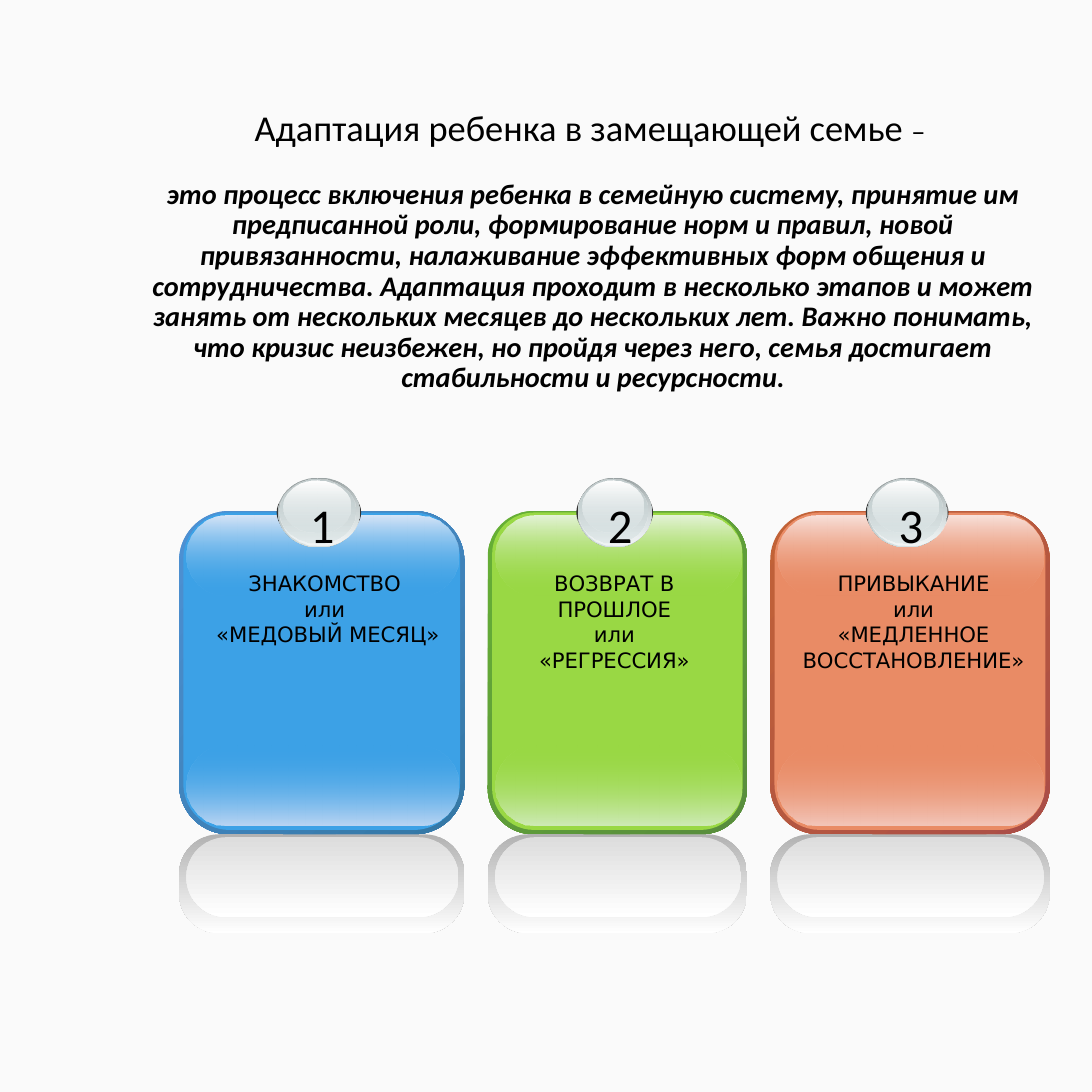
from pptx import Presentation
from pptx.dml.color import RGBColor
from pptx.enum.shapes import MSO_SHAPE as Shape
from pptx.enum.text import MSO_ANCHOR as Anchor, MSO_AUTO_SIZE as AutoSize, PP_ALIGN as Align
from pptx.oxml.ns import qn
from pptx.util import Inches, Pt
from lxml.etree import SubElement

SIDE = 7.5
CARD_TOP, CARD_HEIGHT = 3.51, 2.22
REFLECTION_TOP = CARD_TOP + CARD_HEIGHT
BADGE_TOP = 3.28
TEXT_FONT, LABEL_FONT = "Calibri", "DejaVu Sans"

HEADING = "Адаптация ребенка в замещающей семье "
DEFINITION = (
    "это процесс включения ребенка в семейную систему, принятие им предписанной роли, "
    "формирование норм и правил, новой привязанности, налаживание эффективных форм общения "
    "и сотрудничества. Адаптация проходит в несколько этапов и может занять от нескольких "
    "месяцев до нескольких лет. Важно понимать, что кризис неизбежен, но пройдя через него, "
    "семья достигает стабильности и ресурсности."
)

# Card left and width, label left and width, colours (edge start, edge end, face, top, bottom), lines
STAGES = [
    ((1.23, 1.96), (1.30, 1.86), ("4E91D4", "3477A4", "3CA1E6", "D7E5F7", "BDD6F3"),
     ["ЗНАКОМСТВО", "или", " «МЕДОВЫЙ МЕСЯЦ»"]),
    ((3.35, 1.78), (3.34, 1.76), ("66AF35", "588D3D", "99D844", "E4F3D8", "D0EBB9"),
     ["ВОЗВРАТ В ПРОШЛОЕ", "или", "«РЕГРЕССИЯ»"]),
    ((5.29, 1.92), (5.36, 1.83), ("C16237", "AB4E47", "E98B65", "F8E1DB", "F3C7BB"),
     ["ПРИВЫКАНИЕ", "или", "«МЕДЛЕННОЕ ВОССТАНОВЛЕНИЕ»"]),
]

# Badge ellipses: left and width as shares of the card, top offset, height, colour stops
BADGE_LAYERS = [
    (0.342, 0.296, 0.04, 0.40, [("333333", 100)]),
    (0.347, 0.286, 0.00, 0.48, [("99A1A2", 100), ("D6E1E2", 100)]),
    (0.352, 0.281, 0.00, 0.47, [("D6E1E2", 0), ("F2F5F5", 100)]),
    (0.352, 0.265, 0.01, 0.44, [("C1CBCC", 100), ("D6E1E2", 48)]),
    (0.367, 0.235, 0.02, 0.36, [("FFFFFF", 100), ("D6E1E2", 38)]),
]


def color(value):
    return RGBColor.from_string(value)


def paint(fill, stops, angle):
    """Fill with one colour or with a two-colour gradient of (colour, opacity) stops."""
    if len(stops) == 1:
        fill.solid()
        fill.fore_color.rgb = color(stops[0][0])
        return
    fill.gradient()
    fill.gradient_angle = 360 - angle
    for stop, (value, _) in zip(fill.gradient_stops, stops):
        stop.color.rgb = color(value)


def add_layer(group, kind, left, top, width, height, stops, angle=90, rounding=None):
    layer = group.shapes.add_shape(kind, *map(Inches, (left, top, width, height)))
    if rounding is not None:
        layer.adjustments[0] = rounding
    layer.shadow.inherit = False
    layer.line.fill.background()
    paint(layer.fill, stops, angle)
    for (_, opacity), element in zip(stops, layer.element.spPr.iter(qn("a:srgbClr"))):
        if opacity < 100:
            SubElement(element, qn("a:alpha"), val=str(opacity * 1000))


def add_text(group, left, top, width, height, lines, font, size, align, wrap):
    box = group.shapes.add_textbox(*map(Inches, (left, top, width, height)))
    frame = box.text_frame
    frame.word_wrap = wrap
    frame.auto_size = AutoSize.SHAPE_TO_FIT_TEXT
    frame.text = "\n".join(lines)
    for para in frame.paragraphs:
        para.alignment = align
        para.font.name, para.font.size = font, Pt(size)
        para.font.color.rgb = color("000000")


def add_title(page):
    title = page.shapes.title
    title.left, title.top = Inches(0.84), Inches(1.24)
    title.width, title.height = Inches(6.47), Inches(0.98)
    frame = title.text_frame
    frame.word_wrap = True
    frame.auto_size = AutoSize.NONE
    frame.vertical_anchor = Anchor.MIDDLE
    para = frame.paragraphs[0]
    para.alignment, para.line_spacing = Align.CENTER, 0.9
    para.font.name = TEXT_FONT
    para.font.color.rgb = color("000000")
    for text, size, strong in [(HEADING, 18, False), ("– ", 14, False), (DEFINITION, 14, True)]:
        if strong:
            para.add_line_break()
            para.add_line_break()
        span = para.add_run()
        span.text = text
        span.font.size = Pt(size)
        span.font.bold = span.font.italic = strong
    # Line breaks take the size of the definition
    for line_break in title.element.iter(qn("a:br")):
        SubElement(line_break, qn("a:rPr"), sz="1400")


def add_card(group, left, width, colors):
    edge_start, edge_end, face, top_light, bottom_light = colors
    gloss_left, gloss_width, gloss_height = left + 0.05, width - 0.09, 0.55

    def add_plate(*args, **options):
        add_layer(group, Shape.ROUNDED_RECTANGLE, *args, **options)

    # Body with its face
    add_plate(left, CARD_TOP, width, CARD_HEIGHT, [(edge_start, 100), (edge_end, 100)],
              angle=45, rounding=0.175)
    add_plate(left + 0.03, CARD_TOP + 0.01, width - 0.06, 2.18, [(face, 100)], rounding=0.167)
    # Reflection below the card
    add_plate(left, REFLECTION_TOP, width, 0.68, [("B2B2B2", 100), ("FFFFFF", 100)],
              rounding=0.404)
    # Glossy bands
    bands = [
        (5.12, [(face, 0), (bottom_light, 100)]),
        (3.54, [(top_light, 100), (face, 0)]),
        (REFLECTION_TOP + 0.02, [("DDDDDD", 100), ("FFFFFF", 100)]),
    ]
    for top, stops in bands:
        add_plate(gloss_left, top, gloss_width, gloss_height, stops, rounding=0.5)


def add_badge(group, left, width, number):
    for start, share, offset, height, stops in BADGE_LAYERS:
        add_layer(group, Shape.OVAL, left + start * width, BADGE_TOP + offset,
                  share * width, height, stops)
    add_text(group, left + 0.408 * width, 3.35, 0.209 * width, 0.36, [str(number)],
             TEXT_FONT, 24, Align.LEFT, wrap=False)


def main():
    deck = Presentation()
    deck.slide_width = deck.slide_height = Inches(SIDE)
    page = deck.slides.add_slide(deck.slide_layouts[5])
    paint(page.background.fill, [("FAFAFA", 100)], 0)

    add_title(page)

    # Three numbered stages
    for number, (card, label, colors, lines) in enumerate(STAGES, 1):
        group = page.shapes.add_group_shape()
        add_card(group, *card, colors)
        add_badge(group, *card, number)
        label_left, label_width = label
        add_text(group, label_left, 3.87, label_width, 0.81, lines,
                 LABEL_FONT, 10.5, Align.CENTER, wrap=True)

    deck.save("out.pptx")


if __name__ == "__main__":
    main()
